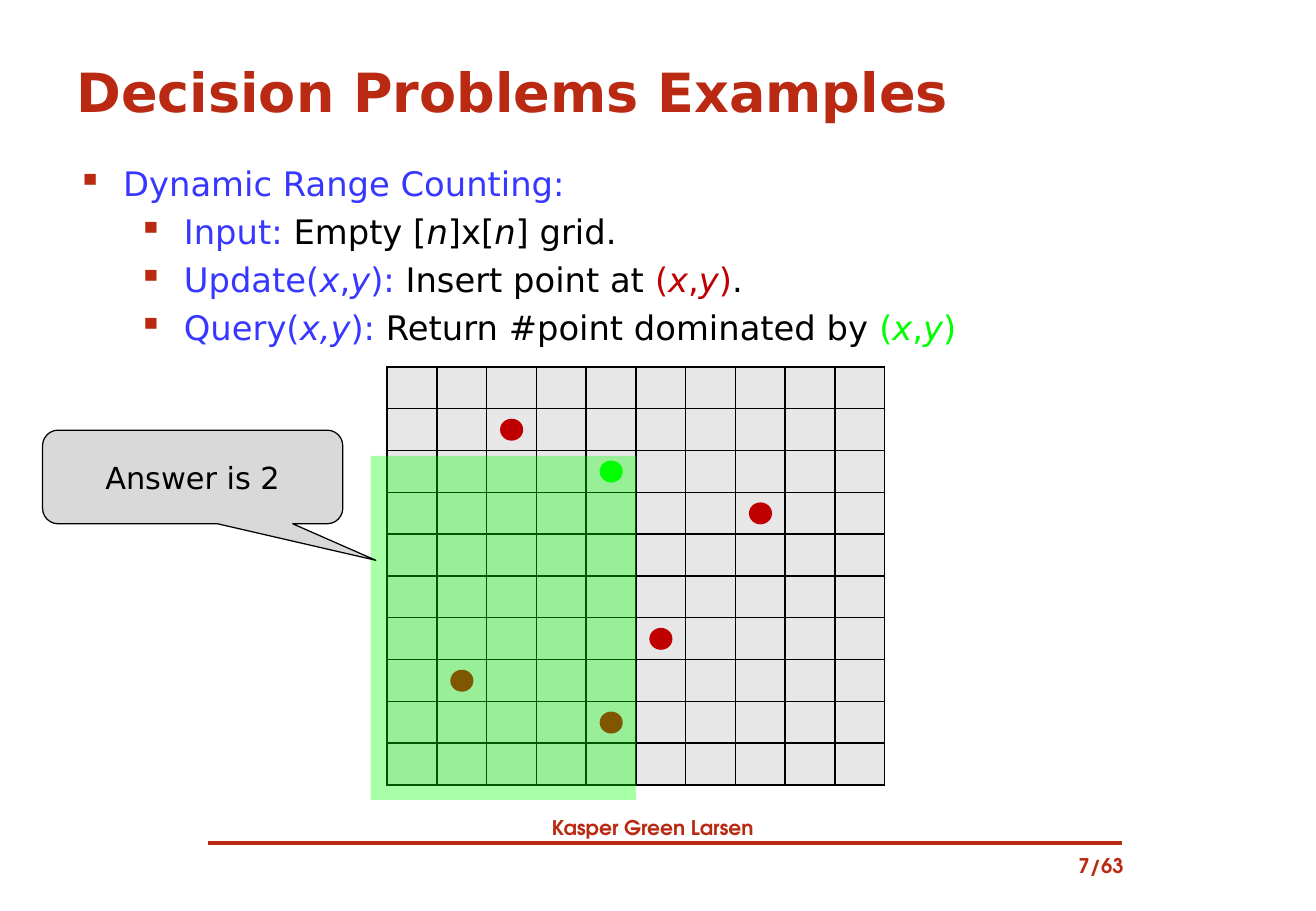
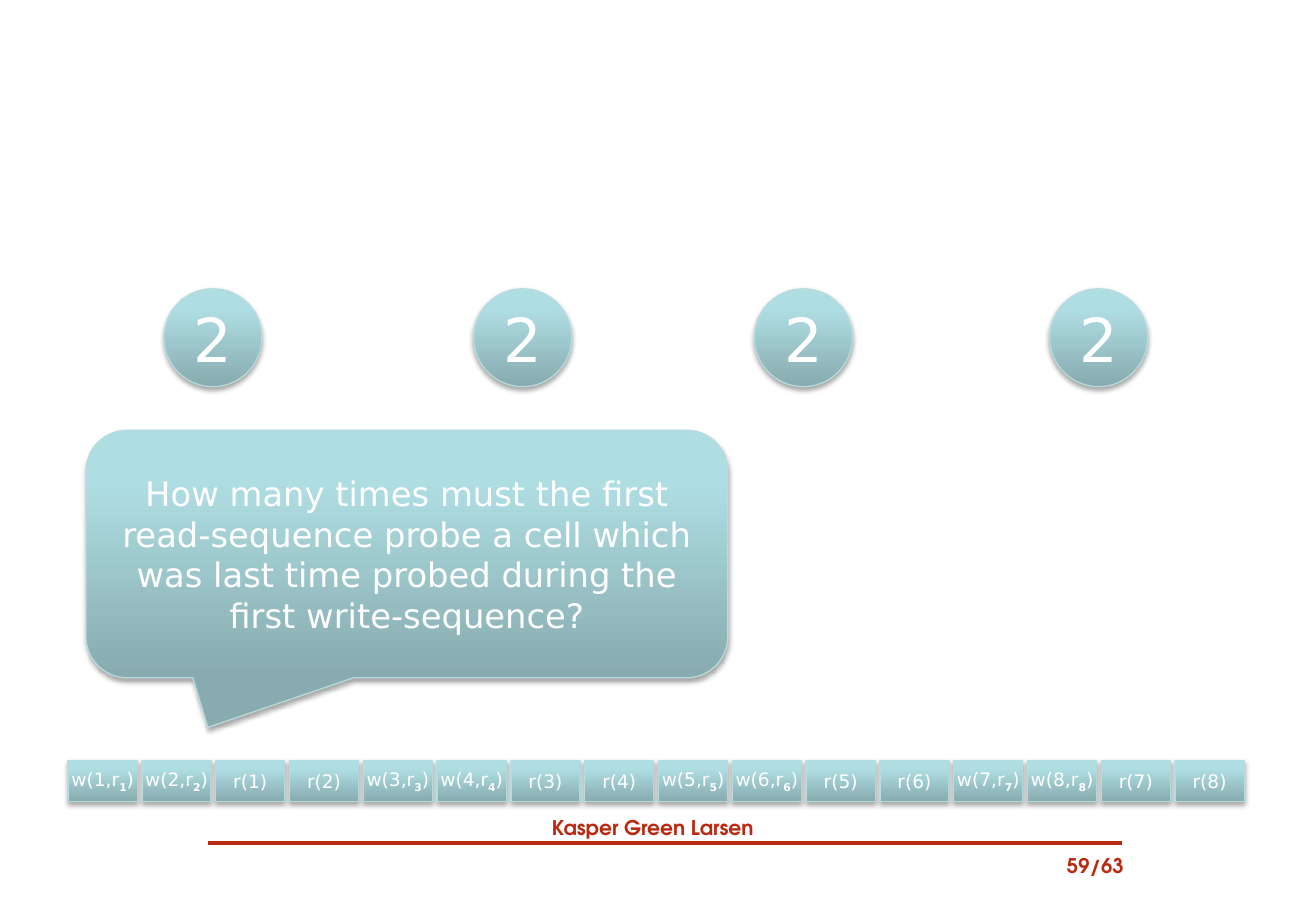
"""Build two lecture slides on dynamic range counting and cell probes."""
from pptx import Presentation
from pptx.dml.color import RGBColor
from pptx.enum.shapes import MSO_CONNECTOR, MSO_SHAPE
from pptx.enum.text import MSO_ANCHOR, PP_ALIGN
from pptx.oxml import parse_xml
from pptx.oxml.ns import nsdecls, qn
from pptx.oxml.xmlchemy import OxmlElement
from pptx.util import Pt

COLOURS = {
    "brand": "BA2A12", "term": "3737FF", "black": "000000", "white": "FFFFFF",
    "point": "C00000", "query": "00FF00", "cell": "E7E7E7", "callout": "D9D9D9",
    "edge": "B6DCDF",
}
GLOSS_STOPS = [(0, "87ABAE"), (80, "AFDEE2"), (100, "AFE0E4")]
BODY_FONT = "DejaVu Sans"
FOOTER_FONT = "TeX Gyre Adventor"
GRID_LEFT, GRID_TOP, GRID_COUNT = 229.5, 217.5, 10
CELL_WIDTH, CELL_HEIGHT = 29.5, 24.8
POINT_CELLS = [(2, 1), (5, 6), (7, 3), (1, 7), (4, 8)]
QUERY_CELL = (4, 2)
PROBE_LEFTS = [97.2, 280.8, 447.2, 622.2]
BULLETS = [
    (0, [("Dynamic Range Counting:", "term")]),
    (1, [("Input: ", "term"), ("Empty [*n*]x[*n*] grid.", "black")]),
    (1, [("Update(*x*,*y*): ", "term"), ("Insert point at ", "black"),
         ("(*x*,*y*)", "point"), (".", "black")]),
    (1, [("Query(*x,y*): ", "term"), ("Return #point dominated by ", "black"),
         ("(*x*,*y*)", "query")]),
]
QUESTION = ("How many times must the first read-sequence probe a cell which "
            "was last time probed during the first write-sequence?")


def rgb(name):
    """Return the named colour."""
    return RGBColor.from_string(COLOURS[name])


def style(font, size, colour, name=BODY_FONT, bold=False):
    """Set the look of a font."""
    font.size, font.name, font.bold = Pt(size), name, bold
    font.color.rgb = rgb(colour)


def add_span(para, text, size, colour):
    """Append a run to a paragraph and return it."""
    span = para.add_run()
    span.text = text
    style(span.font, size, colour)
    return span


def add_text(page, bounds, text, size, align=PP_ALIGN.LEFT, name=BODY_FONT):
    """Add a bold one-line text box in the brand colour."""
    box = page.shapes.add_textbox(*map(Pt, bounds))
    frame = box.text_frame
    frame.word_wrap = True
    frame.vertical_anchor = MSO_ANCHOR.MIDDLE
    frame.text = text
    para = frame.paragraphs[0]
    para.alignment = align
    style(para.runs[0].font, size, "brand", name, True)


def add_footer(page, number):
    """Add the author, the rule and the page number."""
    add_text(page, (38, 479.5, 698, 21.6), "Kasper Green Larsen", 12,
             PP_ALIGN.CENTER, FOOTER_FONT)
    add_text(page, (602.6, 502.5, 70.6, 21.6), f"{number}/63", 12,
             PP_ALIGN.RIGHT, FOOTER_FONT)
    rule = page.shapes.add_connector(
        MSO_CONNECTOR.STRAIGHT, Pt(123.5), Pt(499.5), Pt(665), Pt(499.5))
    rule.line.color.rgb = rgb("brand")
    rule.line.width = Pt(2.25)
    rule._element.spPr.append(OxmlElement("a:effectLst"))


def add_bullets(page, bounds):
    """Add the two-level bullet list."""
    box = page.shapes.add_textbox(*map(Pt, bounds))
    box.text_frame.word_wrap = True
    for index, (level, spans) in enumerate(BULLETS):
        para = box.text_frame.paragraphs[0] if index == 0 else box.text_frame.add_paragraph()
        para.level = level
        if index:
            para.space_before = Pt(4.5)
        props = para._p.get_or_add_pPr()
        props.set("marL", str(Pt(27 + 36 * level)))
        props.set("indent", str(-Pt(27)))
        props.append(parse_xml(
            f'<a:buClr {nsdecls("a")}><a:srgbClr val="{COLOURS["brand"]}"/></a:buClr>'))
        props.append(parse_xml(f'<a:buChar {nsdecls("a")} char="▪"/>'))
        for text, colour in spans:
            for part, piece in enumerate(text.split("*")):
                if piece:
                    add_span(para, piece, 20, colour).font.italic = part % 2 == 1


def add_grid(page):
    """Add the square grid as a bordered table."""
    table = page.shapes.add_table(
        GRID_COUNT, GRID_COUNT, Pt(GRID_LEFT), Pt(GRID_TOP),
        Pt(CELL_WIDTH * GRID_COUNT), Pt(CELL_HEIGHT * GRID_COUNT)).table
    table.first_row = table.horz_banding = False
    for column in table.columns:
        column.width = Pt(CELL_WIDTH)
    for row in table.rows:
        row.height = Pt(CELL_HEIGHT)
    for cell in table.iter_cells():
        cell.margin_left = cell.margin_right = cell.margin_top = cell.margin_bottom = 0
        for side in "LRTB":
            cell._tc.get_or_add_tcPr().append(parse_xml(
                f'<a:ln{side} {nsdecls("a")} w="{Pt(1)}"><a:solidFill>'
                f'<a:srgbClr val="{COLOURS["black"]}"/></a:solidFill></a:ln{side}>'))
        cell.fill.solid()
        cell.fill.fore_color.rgb = rgb("cell")


def add_flat(page, kind, bounds, colour):
    """Add a shape with a plain fill and no line."""
    shape = page.shapes.add_shape(kind, *map(Pt, bounds))
    shape.shadow.inherit = False
    shape.fill.solid()
    shape.fill.fore_color.rgb = rgb(colour)
    shape.line.fill.background()
    return shape


def add_dot(page, column, row, colour):
    """Add a dot in the middle of a grid cell."""
    width, height = 13.7, 13
    left = GRID_LEFT + (column + 0.5) * CELL_WIDTH - width / 2
    top = GRID_TOP + (row + 0.5) * CELL_HEIGHT - height / 2
    add_flat(page, MSO_SHAPE.OVAL, (left, top, width, height), colour)


def add_dominated_area(page):
    """Add the see-through area that the query dominates."""
    area = add_flat(page, MSO_SHAPE.RECTANGLE, (219.6, 270.2, 157.4, 204), "query")
    alpha = OxmlElement("a:alpha")
    alpha.set("val", "34000")
    area._element.spPr.find(".//" + qn("a:srgbClr")).append(alpha)


def point_callout(shape, across, down):
    """Aim the tail of a callout."""
    shape.adjustments[0], shape.adjustments[1] = across, down


def set_centred(shape, text, size, colour):
    """Write centred text in a shape and return its paragraph."""
    frame = shape.text_frame
    frame.word_wrap = True
    frame.vertical_anchor = MSO_ANCHOR.MIDDLE
    para = frame.paragraphs[0]
    para.alignment = PP_ALIGN.CENTER
    add_span(para, text, size, colour)
    return para


def add_answer(page):
    """Add the callout that gives the answer."""
    callout = add_flat(page, MSO_SHAPE.ROUNDED_RECTANGULAR_CALLOUT,
                       (25.2, 255, 178, 55.5), "callout")
    callout.line.color.rgb = rgb("black")
    callout.line.width = Pt(0.75)
    point_callout(callout, 0.61, 0.89)
    set_centred(callout, "Answer is 2", 18, "black")


def add_glossy(page, kind, bounds):
    """Add a shape with the teal gradient and a soft shadow."""
    shape = page.shapes.add_shape(kind, *map(Pt, bounds))
    shape.fill.gradient()
    shape.fill.gradient_angle = 90
    stops = shape._element.spPr.find(".//" + qn("a:gsLst"))
    for stop in list(stops):
        stops.remove(stop)
    for place, colour in GLOSS_STOPS:
        stops.append(parse_xml(
            f'<a:gs {nsdecls("a")} pos="{place * 1000}"><a:srgbClr val="{colour}"/></a:gs>'))
    shape.line.color.rgb = rgb("edge")
    shape.line.width = Pt(0.75)
    shape.shadow.inherit = False
    shape._element.spPr.find(qn("a:effectLst")).append(parse_xml(
        f'<a:outerShdw {nsdecls("a")} blurRad="{Pt(3.1)}" dist="{Pt(1.8)}" dir="5400000" '
        f'rotWithShape="0"><a:srgbClr val="{COLOURS["black"]}"><a:alpha val="35000"/>'
        '</a:srgbClr></a:outerShdw>'))
    return shape


def add_operation(page, slot):
    """Add one write or read box of the operation sequence."""
    box = add_glossy(page, MSO_SHAPE.RECTANGLE, (40.4 + 43.74 * slot, 450.6, 41, 24.6))
    frame = box.text_frame
    frame.margin_left = frame.margin_right = frame.margin_top = frame.margin_bottom = 0
    number = slot // 4 * 2 + slot % 2 + 1
    if slot % 4 >= 2:
        set_centred(box, f"r({number})", 11, "white")
        return
    para = set_centred(box, f"w({number},r", 11, "white")
    index = add_span(para, str(number), 11, "white")
    index.font.bold = True
    index.font._element.set("baseline", "-25000")
    add_span(para, ")", 11, "white")


def build_range_counting(page):
    """Fill the slide on dynamic range counting."""
    add_footer(page, 7)
    add_bullets(page, (38.9, 93, 697, 374))
    add_text(page, (38.2, 26, 702, 55.4), "Decision Problems Examples", 32)
    add_grid(page)
    for column, row in POINT_CELLS:
        add_dot(page, column, row, "point")
    add_dot(page, *QUERY_CELL, "query")
    add_dominated_area(page)
    add_answer(page)


def build_probe_question(page):
    """Fill the slide on the probes of a read-sequence."""
    add_footer(page, 59)
    for slot in range(16):
        add_operation(page, slot)
    question = add_glossy(page, MSO_SHAPE.ROUNDED_RECTANGULAR_CALLOUT, (51, 255, 380.4, 146.8))
    point_callout(question, -0.31, 0.7)
    set_centred(question, QUESTION, 20, "white")
    for left in PROBE_LEFTS:
        probe = add_glossy(page, MSO_SHAPE.OVAL, (left, 171.2, 58, 58))
        set_centred(probe, "2", 36, "white")


def main():
    """Build and save the deck."""
    deck = Presentation()
    deck.slide_width, deck.slide_height = Pt(780), Pt(540)
    for build in (build_range_counting, build_probe_question):
        build(deck.slides.add_slide(deck.slide_layouts[6]))
    deck.save("out.pptx")


if __name__ == "__main__":
    main()
